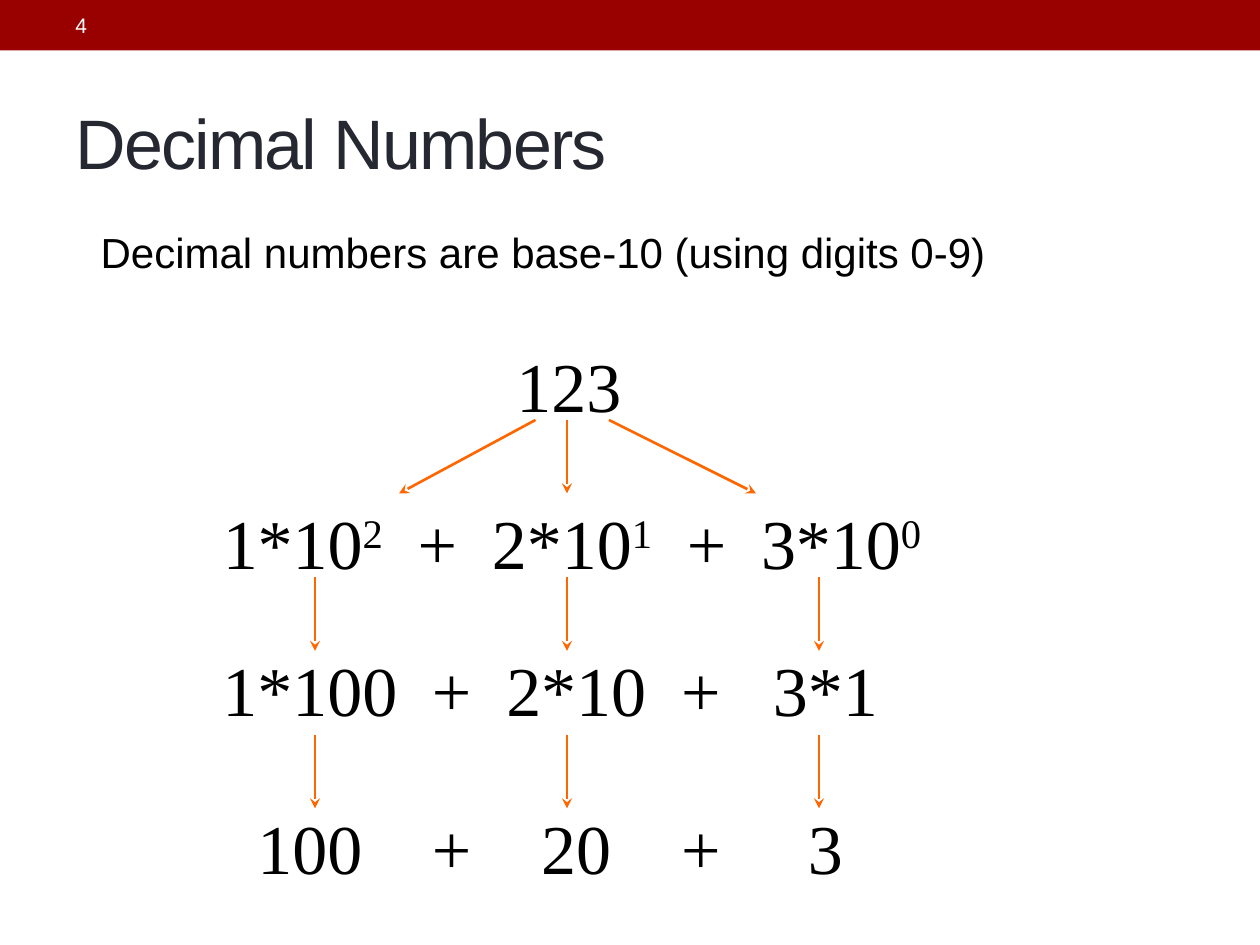
from dataclasses import dataclass

from lxml import etree
from pptx import Presentation
from pptx import util as u
from pptx.dml.color import RGBColor
from pptx.enum import shapes, text
from pptx.oxml.ns import qn


@dataclass(frozen=True)
class Theme:
    sans: str = "Arial"
    serif: str = "Times New Roman"
    band: str = "990000"
    title: str = "252731"
    ink: str = "000000"
    light: str = "FFFFFF"
    arrow: str = "FF6600"
    small: int = 12
    body: int = 24
    large: int = 40
    stroke: float = 1.5


class Deck:
    """Draws styled elements on the current slide, with lengths in points."""

    def __init__(self, theme, width, height):
        self.theme = theme
        self.prs = Presentation()
        self.prs.slide_width, self.prs.slide_height = u.Pt(width), u.Pt(height)
        self.s = self.prs.slides.add_slide(self.prs.slide_layouts[6])

    def band(self, x, y, w, h):
        sp = self.s.shapes.add_shape(shapes.MSO_SHAPE.RECTANGLE, *map(u.Pt, (x, y, w, h)))
        sp.shadow.inherit = False
        sp.fill.solid()
        sp.fill.fore_color.rgb = RGBColor.from_string(self.theme.band)
        sp.line.fill.background()

    def text(self, x, y, w, h, content, size, font, color, middle=False):
        tf = self.s.shapes.add_textbox(*map(u.Pt, (x, y, w, h))).text_frame
        tf.word_wrap = True
        tf.vertical_anchor = text.MSO_ANCHOR.MIDDLE if middle else text.MSO_ANCHOR.TOP
        p = tf.paragraphs[0]
        if content:
            p.add_run().text = content
        p.font.size, p.font.name = u.Pt(size), font
        p.font.color.rgb = RGBColor.from_string(color)
        return p

    def title(self, x, y, w, h, content):
        t = self.theme
        p = self.text(x, y, w, h, content, t.large, t.sans, t.title, middle=True)
        p.runs[0].font._element.set("spc", "-100")

    def body(self, x, y, w, h, content, indent):
        t = self.theme
        p = self.text(x, y, w, h, content, t.body, t.sans, t.ink)
        p.space_before = u.Pt(0.2 * t.body)
        p._p.get_or_add_pPr().set("marL", str(u.Pt(indent)))

    def number(self, x, y, w, h, content):
        t = self.theme
        self.text(x, y, w, h, content, t.large, t.serif, t.ink)

    def equation(self, x, y, w, h, content, stops):
        t = self.theme
        p = self.text(x, y, w, h, "", t.large, t.serif, t.ink)
        tabs = etree.Element(qn("a:tabLst"))
        for stop in stops:
            etree.SubElement(tabs, qn("a:tab"), pos=str(u.Pt(stop)), algn="ctr")
        p._p.get_or_add_pPr().find(qn("a:defRPr")).addprevious(tabs)
        for term in content.split():
            base, _, power = term.partition("^")
            p.add_run().text = "\t" + base
            if power:
                r = p.add_run()
                r.text = power
                r.font._element.set("baseline", "30000")

    def arrow(self, x1, y1, x2, y2):
        c = self.s.shapes.add_connector(
            shapes.MSO_CONNECTOR.STRAIGHT, *map(u.Pt, (x1, y1, x2, y2)))
        c.line.color.rgb = RGBColor.from_string(self.theme.arrow)
        c.line.width = u.Pt(self.theme.stroke)
        etree.SubElement(c.line._get_or_add_ln(), qn("a:tailEnd"), type="stealth")
        etree.SubElement(c._element.spPr, qn("a:effectLst"))


def main():
    t = Theme()
    deck = Deck(t, 720, 540)
    deck.band(0, 0, 720, 28.8)
    deck.text(36, 1.5, 228, 26, "4", t.small, t.sans, t.light, middle=True)
    deck.title(36, 42, 648, 78, "Decimal Numbers")
    deck.number(288, 192, 78, 55.5, "123")
    deck.body(36, 126, 636, 66, "Decimal numbers are base-10 (using digits 0-9)", 14.4)

    power_stops = [46 + 76.9 * i for i in range(5)]
    value_stops = [50] + [131 + 71.2 * i for i in range(4)]
    rows = [
        (282, "1*10^2 + 2*10^1 + 3*10^0", power_stops),
        (366, "1*100 + 2*10 + 3*1", value_stops),
        (456, "100 + 20 + 3", value_stops),
    ]
    for y, content, stops in rows:
        deck.equation(120, y, 438, 55.5, content, stops)

    columns = (180, 324, 468)
    arrows = [(240, [(306, 228), (324, 324), (348, 432)])]
    arrows += [(y, [(x, x) for x in columns]) for y in (330, 420)]
    for y, spans in arrows:
        for start, end in spans:
            deck.arrow(start, y, end, y + 42)
    deck.prs.save("out.pptx")


if __name__ == "__main__":
    main()
